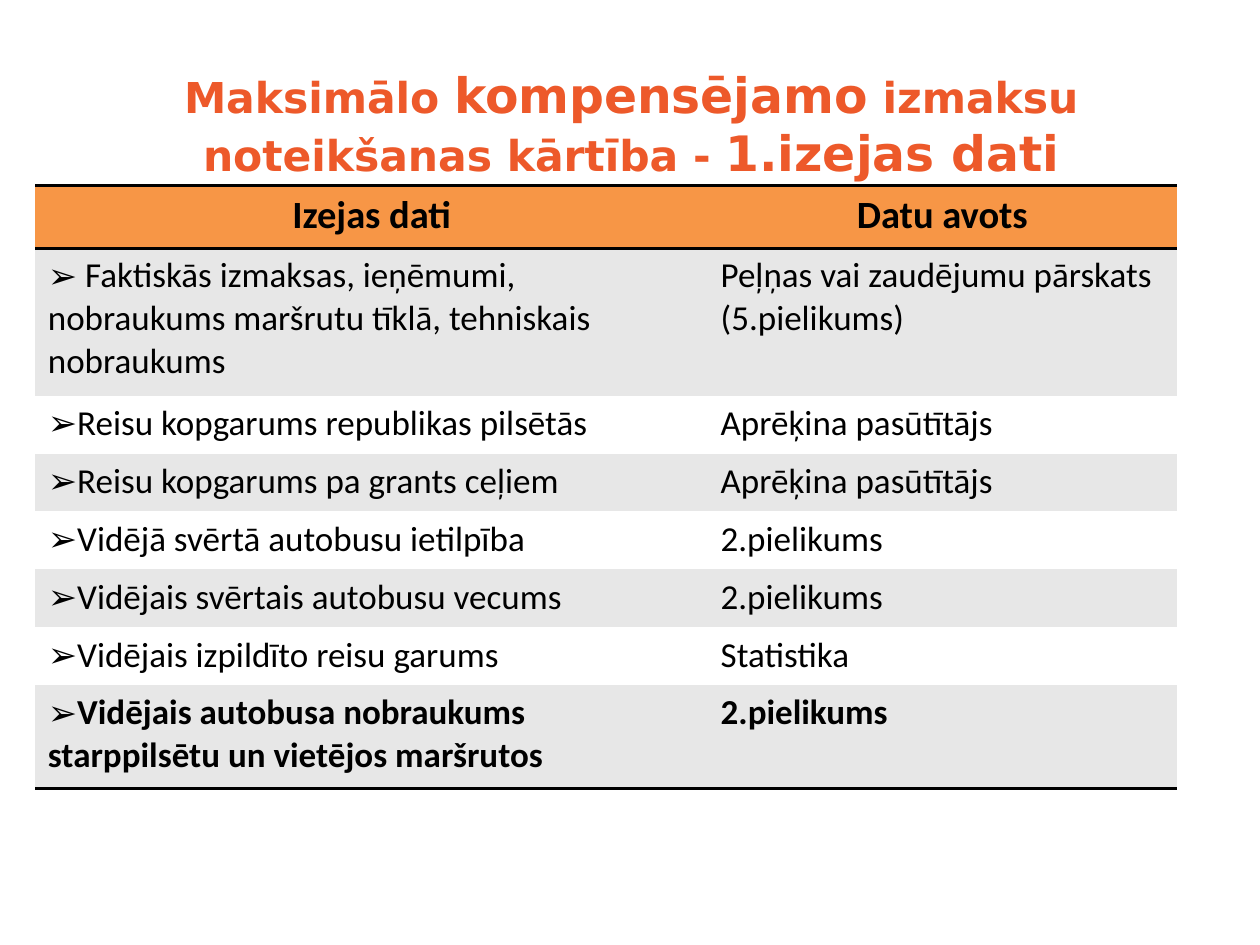
from lxml.etree import SubElement
from pptx import Presentation
from pptx.dml.color import RGBColor
from pptx.enum.text import MSO_ANCHOR, PP_ALIGN
from pptx.oxml.ns import qn
from pptx.util import Inches, Pt

TITLE = [
    ("Maksimālo ", 24.3),
    ("kompensējamo", 27.9),
    (" izmaksu noteikšanas kārtība - ", 24.3),
    ("1.izejas dati", 27.9),
]
ROWS = [
    ("Izejas dati", "Datu avots"),
    (" Faktiskās izmaksas, ieņēmumi, nobraukums maršrutu tīklā, tehniskais nobraukums",
     "Peļņas vai zaudējumu pārskats (5.pielikums)"),
    ("Reisu kopgarums republikas pilsētās", "Aprēķina pasūtītājs"),
    ("Reisu kopgarums pa grants ceļiem", "Aprēķina pasūtītājs"),
    ("Vidējā svērtā autobusu ietilpība", "2.pielikums"),
    ("Vidējais svērtais autobusu vecums", "2.pielikums"),
    ("Vidējais izpildīto reisu garums", "Statistika"),
    ("Vidējais autobusa nobraukums starppilsētu un vietējos maršrutos", "2.pielikums"),
]
COL_WIDTHS = [5.34, 3.72]
ROW_HEIGHTS = [0.5, 1.17] + [0.46] * 5 + [0.82]
LAST = len(ROWS) - 1
NO_STYLE = "{2D5ABB26-0587-4C30-8999-92F81FD0307C}"


def color(value):
    return RGBColor.from_string(value)


def add_run(p, text, font, size, value, bold):
    r = p.add_run()
    r.text = text
    r.font.name = font
    r.font.size = Pt(size)
    r.font.bold = bold
    r.font.color.rgb = color(value)


def add_border(cell, side):
    ln = SubElement(cell._tc.get_or_add_tcPr(), qn(f"a:{side}"), w=str(Pt(2)))
    fill = SubElement(ln, qn("a:solidFill"))
    SubElement(fill, qn("a:srgbClr"), val="000000")


def add_bullet(p):
    pPr = p._p.get_or_add_pPr()
    pPr.set("marL", "0")
    pPr.set("indent", "0")
    SubElement(pPr, qn("a:buFont"), typeface="DejaVu Sans")
    SubElement(pPr, qn("a:buChar"), char="➢")


def add_title(s):
    sp = s.shapes.title
    sp.left, sp.top, sp.width, sp.height = map(Inches, (0.51, 0.44, 9, 0.87))
    tf = sp.text_frame
    tf.word_wrap = True
    tf.vertical_anchor = MSO_ANCHOR.MIDDLE
    tf.margin_top, tf.margin_bottom = Inches(0.2), 0
    p = tf.paragraphs[0]
    p.alignment = PP_ALIGN.CENTER
    for text, size in TITLE:
        add_run(p, text, "DejaVu Sans", size, "ED592A", True)


def add_data_table(s):
    frame = s.shapes.add_table(
        len(ROWS), len(COL_WIDTHS), Inches(0.28), Inches(1.47),
        Inches(sum(COL_WIDTHS)), Inches(sum(ROW_HEIGHTS)))
    table = frame.table
    table._tbl.tblPr.find(qn("a:tableStyleId")).text = NO_STYLE
    for column, width in zip(table.columns, COL_WIDTHS):
        column.width = Inches(width)
    for i, (row, height) in enumerate(zip(table.rows, ROW_HEIGHTS)):
        row.height = Inches(height)
        header = i == 0
        for j, cell in enumerate(row.cells):
            if header:
                add_border(cell, "lnT")
            if i in (0, LAST):
                add_border(cell, "lnB")
            cell.fill.solid()
            cell.fill.fore_color.rgb = color(
                "F79646" if header else "E7E7E7" if i % 2 else "FFFFFF")
            p = cell.text_frame.paragraphs[0]
            if header:
                p.alignment = PP_ALIGN.CENTER
            elif j == 0:
                add_bullet(p)
            add_run(p, ROWS[i][j], "Calibri", 22 if header else 20,
                    "000000", i in (0, LAST))


def main():
    prs = Presentation()
    prs.slide_width, prs.slide_height = Inches(10), Inches(7.5)
    s = prs.slides.add_slide(prs.slide_layouts[5])
    add_title(s)
    add_data_table(s)
    prs.save("out.pptx")


if __name__ == "__main__":
    main()
